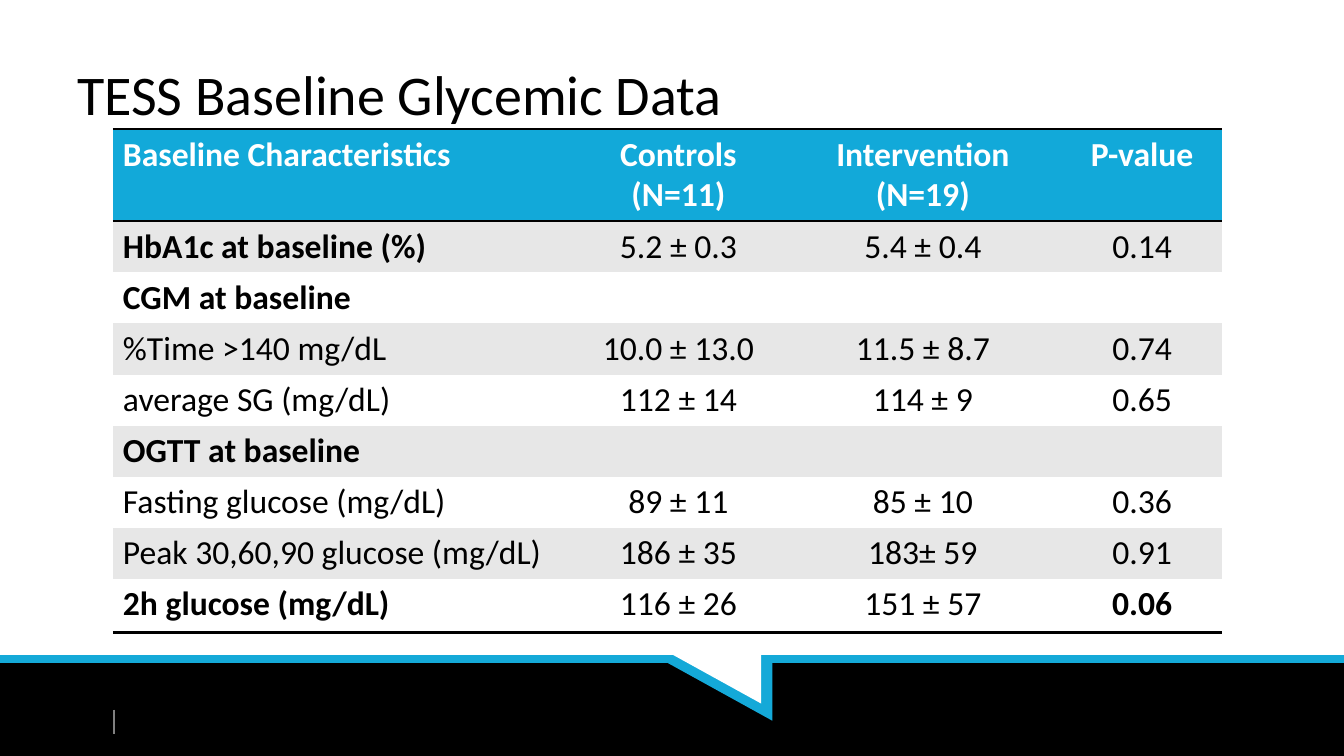
from dataclasses import dataclass

from lxml import etree
from pptx import Presentation
from pptx.dml.color import RGBColor
from pptx.enum.shapes import MSO_CONNECTOR, MSO_SHAPE
from pptx.enum.text import MSO_ANCHOR, PP_ALIGN
from pptx.oxml.ns import qn
from pptx.util import Inches, Pt

RECTANGLE = MSO_SHAPE.RECTANGLE
TRIANGLE = MSO_SHAPE.RIGHT_TRIANGLE
STRAIGHT = MSO_CONNECTOR.STRAIGHT
LEFT, CENTER = PP_ALIGN.LEFT, PP_ALIGN.CENTER
MIDDLE = MSO_ANCHOR.MIDDLE

FONT = "Calibri"
BLACK, WHITE, GRAY = "000000", "FFFFFF", "E7E7E7"
BLUE, HEADER_BLUE, DIVIDER_GRAY = "14A9D8", "12A9D9", "808080"
PLAIN_TABLE_STYLE = "{2D5ABB26-0587-4C30-8999-92F81FD0307C}"
SLIDE_WIDTH, SLIDE_HEIGHT = Inches(13.33), Inches(7.5)


@dataclass
class Panel:
    """A filled shape; lengths are percent of the slide."""
    preset: MSO_SHAPE
    left: float
    top: float
    width: float
    height: float
    fill: str
    rotation: float = 0


@dataclass
class Rule:
    """A straight line; ends are percent of the slide."""
    start: tuple[float, float]
    end: tuple[float, float]
    color: str
    weight: float


@dataclass
class Row:
    """A table row; bold lists the columns set in bold."""
    texts: tuple[str, ...]
    bold: tuple[int, ...] = ()
    height: float = 6.76


FOOTER = [
    Panel(RECTANGLE, 0, 87.2, 100, 12.8, BLACK),
    Rule((0, 87.2), (100, 87.2), BLUE, 6),
    Panel(TRIANGLE, 49.58, 87.6, 7.88, 7.73, BLUE, 180),
    Panel(TRIANGLE, 48.75, 85.33, 7.88, 7.73, WHITE, 180),
    Rule((8.48, 93.87), (8.48, 97.07), DIVIDER_GRAY, 1),
]
COLUMN_WIDTHS = (34.28, 15.6, 20.78, 11.85)
ROWS = [
    Row(("Baseline Characteristics", "Controls\n(N=11)",
         "Intervention\n(N=19)", "P-value"), (0, 1, 2, 3), 12.17),
    Row(("HbA1c at baseline (%)", "5.2 ± 0.3", "5.4 ± 0.4", "0.14"), (0,)),
    Row(("CGM at baseline", "", "", ""), (0,)),
    Row(("%Time >140 mg/dL", "10.0 ± 13.0", "11.5 ± 8.7", "0.74")),
    Row(("average SG (mg/dL)", "112 ± 14", "114 ± 9", "0.65")),
    Row(("OGTT at baseline", "", "", ""), (0,)),
    Row(("Fasting glucose (mg/dL)", "89 ± 11", "85 ± 10", "0.36")),
    Row(("Peak 30,60,90 glucose (mg/dL)", "186 ± 35", "183± 59", "0.91")),
    Row(("2h glucose (mg/dL)", "116 ± 26", "151 ± 57", "0.06"), (0, 3), 7.07),
]


def across(percent: float) -> int:
    return round(SLIDE_WIDTH * percent / 100)


def down(percent: float) -> int:
    return round(SLIDE_HEIGHT * percent / 100)


def rgb(value: str) -> RGBColor:
    return RGBColor.from_string(value)


def format_paragraph(para, size: float, color: str, align, bold: bool = False) -> None:
    para.alignment = align
    para.font.name = FONT
    para.font.size = Pt(size)
    para.font.bold = bold
    para.font.color.rgb = rgb(color)


def draw_panel(page, panel: Panel) -> None:
    shape = page.shapes.add_shape(panel.preset, across(panel.left), down(panel.top),
                                  across(panel.width), down(panel.height))
    shape.shadow.inherit = False
    shape.fill.solid()
    shape.fill.fore_color.rgb = rgb(panel.fill)
    shape.line.fill.background()
    shape.rotation = panel.rotation


def draw_rule(page, rule: Rule) -> None:
    line = page.shapes.add_connector(STRAIGHT, across(rule.start[0]), down(rule.start[1]),
                                     across(rule.end[0]), down(rule.end[1]))
    line.line.color.rgb = rgb(rule.color)
    line.line.width = Pt(rule.weight)
    etree.SubElement(line._element.spPr, qn("a:effectLst"))


def add_border(cell, side: str) -> None:
    edge = etree.SubElement(cell._tc.get_or_add_tcPr(), qn(f"a:{side}"), w=str(Pt(2)))
    fill = etree.SubElement(edge, qn("a:solidFill"))
    etree.SubElement(fill, qn("a:srgbClr"), val=BLACK)


def draw_title(page, text: str) -> None:
    title = page.shapes.title
    title.left, title.top = across(5), down(4)
    title.width, title.height = across(90), down(16.67)
    title.text_frame.text = text
    title.text_frame.vertical_anchor = MIDDLE
    format_paragraph(title.text_frame.paragraphs[0], 40, BLACK, LEFT)


def draw_table(page, rows: list[Row]) -> None:
    table = page.shapes.add_table(
        len(rows), len(COLUMN_WIDTHS), across(8.4), down(17.07),
        across(sum(COLUMN_WIDTHS)), down(sum(row.height for row in rows))).table
    table._tbl.tblPr.find(qn("a:tableStyleId")).text = PLAIN_TABLE_STYLE
    table.horz_banding = False
    for column, width in zip(table.columns, COLUMN_WIDTHS):
        column.width = across(width)
    for r, row in enumerate(rows):
        table.rows[r].height = down(row.height)
        is_header, is_last = r == 0, r == len(rows) - 1
        fill = HEADER_BLUE if is_header else (GRAY if r % 2 else WHITE)
        for c, text in enumerate(row.texts):
            cell = table.cell(r, c)
            # Borders come before the fill in the cell properties
            if is_header:
                add_border(cell, "lnT")
            if is_header or is_last:
                add_border(cell, "lnB")
            cell.fill.solid()
            cell.fill.fore_color.rgb = rgb(fill)
            cell.text_frame.text = text
            for para in cell.text_frame.paragraphs:
                format_paragraph(para, 24, WHITE if is_header else BLACK,
                                 CENTER if c else LEFT, c in row.bold)


def main() -> None:
    deck = Presentation()
    deck.slide_width, deck.slide_height = SLIDE_WIDTH, SLIDE_HEIGHT
    page = deck.slides.add_slide(deck.slide_layouts.get_by_name("Title Only"))
    # Footer band with its notch
    for part in FOOTER:
        if isinstance(part, Panel):
            draw_panel(page, part)
        else:
            draw_rule(page, part)
    # Title and data
    draw_title(page, "TESS Baseline Glycemic Data")
    draw_table(page, ROWS)
    deck.save("out.pptx")


if __name__ == "__main__":
    main()
